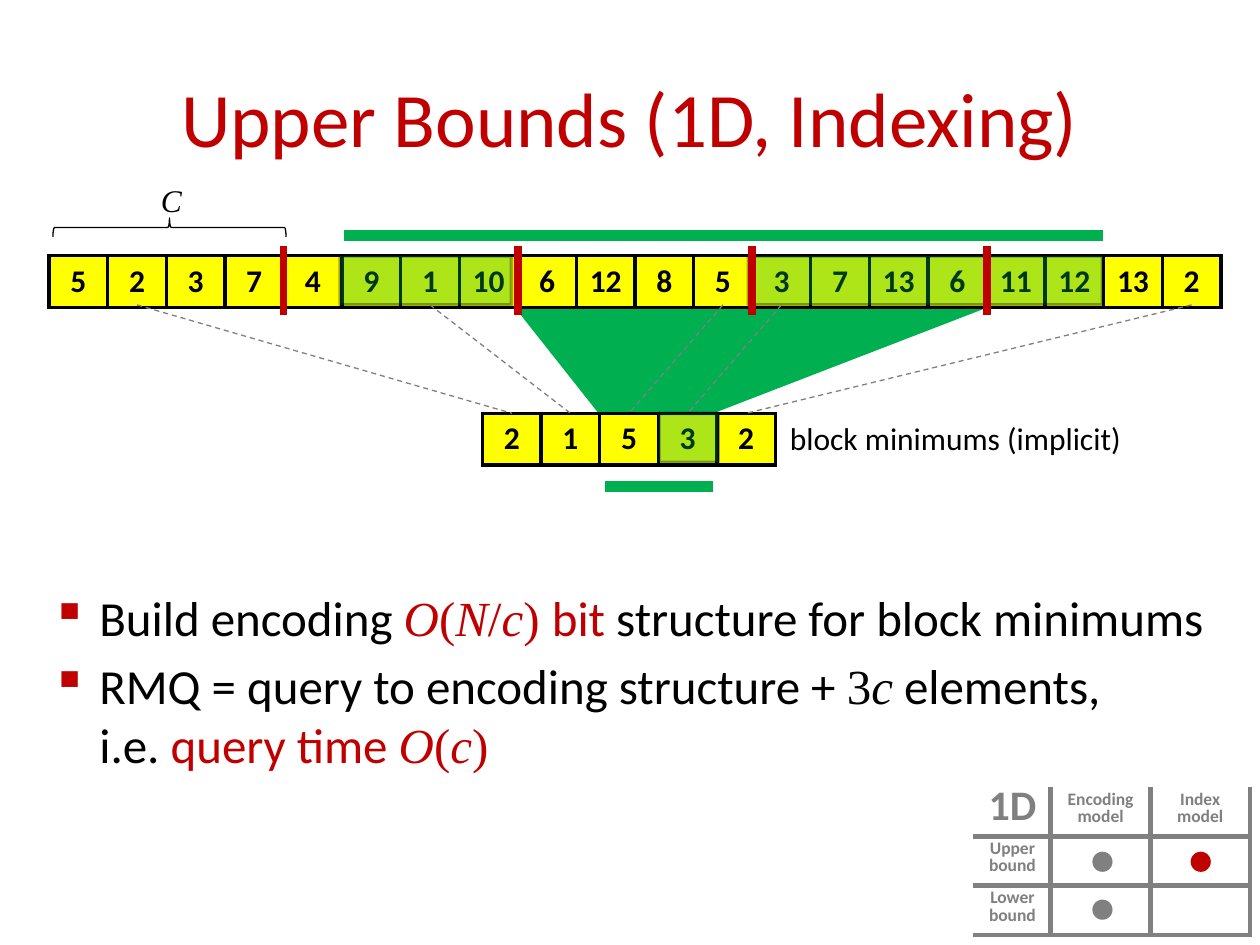
"""Build the slide on upper bounds for one-dimensional range minimum indexing."""
from lxml import etree
from pptx import Presentation
from pptx.dml.color import RGBColor
from pptx.enum.dml import MSO_LINE
from pptx.enum.shapes import MSO_CONNECTOR, MSO_SHAPE
from pptx.enum.text import MSO_ANCHOR, PP_ALIGN
from pptx.oxml.ns import qn
from pptx.util import Inches, Pt

BLACK = RGBColor(0x00, 0x00, 0x00)
RED = RGBColor(0xC0, 0x00, 0x00)
GREEN = RGBColor(0x00, 0xB0, 0x50)
YELLOW = RGBColor(0xFF, 0xFF, 0x00)
GREY = RGBColor(0x80, 0x80, 0x80)
SANS, SERIF = "Calibri", "Times New Roman"
CENTER, LEFT = PP_ALIGN.CENTER, PP_ALIGN.LEFT
MIDDLE, TOP, BOTTOM = MSO_ANCHOR.MIDDLE, MSO_ANCHOR.TOP, MSO_ANCHOR.BOTTOM
STRAIGHT, DASH = MSO_CONNECTOR.STRAIGHT, MSO_LINE.DASH
RECT, OVAL, BRACE = MSO_SHAPE.RECTANGLE, MSO_SHAPE.OVAL, MSO_SHAPE.LEFT_BRACE

CELL, ROW = 0.465, 0.41
ARRAY_X, ARRAY_Y = 0.39, 2.03
MIN_X, MIN_Y = 3.83, 3.28
JOIN_Y = 2.42
ARRAY = [5, 2, 3, 7, 4, 9, 1, 10, 6, 12, 8, 5, 3, 7, 13, 6, 11, 12, 13, 2]
MINIMUMS = [2, 1, 5, 3, 2]
MINIMUM_INDEXES = [1, 6, 11, 12, 19]
BLOCK = 4
MODELS = [["1D", "Encoding\nmodel", "Index\nmodel"],
          ["Upper\nbound", "", ""],
          ["Lower\nbound", "", ""]]
BULLETS = [
    [("Build encoding ", SANS, BLACK, False), ("O", SERIF, RED, True),
     ("(", SERIF, RED, False), ("N", SERIF, RED, True), ("/", SERIF, RED, False),
     ("c", SERIF, RED, True), (") ", SERIF, RED, False), ("bit ", SANS, RED, False),
     ("structure for block minimums", SANS, BLACK, False)],
    [("RMQ = query to encoding structure + ", SANS, BLACK, False),
     ("3", SERIF, BLACK, False), ("c", SERIF, BLACK, True),
     (" elements,", SANS, BLACK, False), None, ("i.e. ", SANS, BLACK, False),
     ("query time ", SANS, RED, False), ("O", SERIF, RED, True),
     ("(", SERIF, RED, False), ("c", SERIF, RED, True), (")", SERIF, RED, False)],
]


def style(font, size, name=SANS, color=BLACK, bold=False, italic=False):
    """Set the look of one font."""
    font.size, font.name, font.bold, font.italic = Pt(size), name, bold, italic
    font.color.rgb = color


def add_text(s, box, text, size, align=LEFT, anchor=TOP, **look):
    """Add a text box with one uniform paragraph."""
    tf = s.shapes.add_textbox(*map(Inches, box)).text_frame
    tf.word_wrap, tf.vertical_anchor = True, anchor
    tf.text = text
    p = tf.paragraphs[0]
    p.alignment = align
    style(p.runs[0].font, size, **look)


def add_bullets(s, box, items):
    """Add the bulleted list with mixed runs, where None is a line break."""
    tf = s.shapes.add_textbox(*map(Inches, box)).text_frame
    tf.word_wrap = True
    for i, item in enumerate(items):
        p = tf.add_paragraph() if i else tf.paragraphs[0]
        p.space_before = Pt(5.6)
        pPr = p._p.get_or_add_pPr()
        pPr.set("marL", str(Inches(0.38)))
        pPr.set("indent", str(-Inches(0.38)))
        color = etree.SubElement(pPr, qn("a:buClr"))
        etree.SubElement(color, qn("a:srgbClr"), val=str(RED))
        etree.SubElement(pPr, qn("a:buChar"), char="▪")
        for part in item:
            if part is None:
                p.add_line_break()
                continue
            r = p.add_run()
            r.text, name, tint, italic = part
            style(r.font, 28, name, tint, italic=italic)


def add_line(s, start, end, color, width, dash=None):
    """Add a straight line without a shadow."""
    line = s.shapes.add_connector(STRAIGHT, *map(Inches, start + end))
    line.line.color.rgb, line.line.width = color, Pt(width)
    if dash:
        line.line.dash_style = dash
    etree.SubElement(line._element.spPr, qn("a:effectLst"))


def add_dot(s, x, y, color):
    """Add a filled dot."""
    dot = s.shapes.add_shape(OVAL, *map(Inches, (x, y, 0.16, 0.16)))
    dot.shadow.inherit = False
    dot.fill.solid()
    dot.fill.fore_color.rgb = color
    dot.line.fill.background()


def add_highlight(s, x, y, width):
    """Add a see-through green rectangle over table cells."""
    rect = s.shapes.add_shape(RECT, *map(Inches, (x, y, width, 0.39)))
    rect.shadow.inherit = False
    rect.fill.solid()
    rect.fill.fore_color.rgb = GREEN
    rect.line.color.rgb, rect.line.width = BLACK, Pt(2)
    for color in rect._element.spPr.iter(qn("a:srgbClr")):
        etree.SubElement(color, qn("a:alpha"), val="32000")


def add_brace(s):
    """Add the brace that spans the first block."""
    brace = s.shapes.add_shape(BRACE, *map(Inches, (1.27, 0.88, 0.15, 1.85)))
    brace.shadow.inherit = False
    brace.rotation = 90
    brace.fill.background()
    brace.line.color.rgb, brace.line.width = BLACK, Pt(0.75)


def add_funnel(s):
    """Add the green area that joins whole blocks to their minimums."""
    points = [(4.07, 2.42), (4.75, 3.28), (5.69, 3.27), (7.84, 2.44)]
    corners = [(Inches(x), Inches(y)) for x, y in points]
    builder = s.shapes.build_freeform(*corners[0])
    builder.add_line_segments(corners[1:])
    funnel = builder.convert_to_shape()
    funnel.shadow.inherit = False
    funnel.fill.solid()
    funnel.fill.fore_color.rgb = GREEN
    funnel.line.fill.background()


def set_borders(cell, sides, color, width):
    """Draw the given sides of a cell, in the order L, R, T, B."""
    tcPr = cell._tc.get_or_add_tcPr()
    for i, side in enumerate(sides):
        ln = etree.Element(qn("a:ln" + side), w=str(Pt(width)))
        fill = etree.SubElement(ln, qn("a:solidFill"))
        etree.SubElement(fill, qn("a:srgbClr"), val=str(color))
        tcPr.insert(i, ln)


def add_grid(s, x, y, widths, heights):
    """Add a plain table and return it."""
    box = map(Inches, (x, y, sum(widths), sum(heights)))
    table = s.shapes.add_table(len(heights), len(widths), *box).table
    table.first_row = table.horz_banding = False
    for column, width in zip(table.columns, widths):
        column.width = Inches(width)
    for row, height in zip(table.rows, heights):
        row.height = Inches(height)
    return table


def add_array(s, x, y, values):
    """Add a row of yellow number cells."""
    table = add_grid(s, x, y, [CELL] * len(values), [ROW])
    for cell, value in zip(table.iter_cells(), values):
        cell.margin_left = cell.margin_right = Inches(0.02)
        cell.vertical_anchor = MIDDLE
        cell.text = str(value)
        p = cell.text_frame.paragraphs[0]
        p.alignment = CENTER
        style(p.runs[0].font, 18, bold=True)
        cell.fill.solid()
        cell.fill.fore_color.rgb = YELLOW
        set_borders(cell, "LRTB", BLACK, 2.25)


def add_models(s):
    """Add the small overview table of models and bounds."""
    table = add_grid(s, 7.73, 6.25, [0.61, 0.79, 0.79], [0.39] * 3)
    for i, row in enumerate(MODELS):
        for j, text in enumerate(row):
            cell = table.cell(i, j)
            cell.margin_left = cell.margin_right = Inches(0.05)
            cell.margin_top = cell.margin_bottom = Inches(0.04)
            corner = i == j == 0
            cell.vertical_anchor = BOTTOM if corner else TOP
            cell.text = text
            for p in cell.text_frame.paragraphs:
                p.alignment, p.line_spacing = CENTER, Pt(10)
                for r in p.runs:
                    style(r.font, 24 if corner else 10, color=GREY, bold=True)
            cell.fill.background()
            sides = ("L" if j else "") + "R" + ("T" if i else "") + "B"
            set_borders(cell, sides, GREY, 3)


def main():
    """Build and save the slide."""
    prs = Presentation()
    prs.slide_width, prs.slide_height = Inches(10), Inches(7.5)
    s = prs.slides.add_slide(prs.slide_layouts[6])
    add_funnel(s)
    add_array(s, MIN_X, MIN_Y, MINIMUMS)
    add_array(s, ARRAY_X, ARRAY_Y, ARRAY)
    add_line(s, (2.73, 1.87), (8.75, 1.87), GREEN, 6)
    add_line(s, (4.8, 3.86), (5.66, 3.86), GREEN, 6)
    for x, y, width in [(2.7, ARRAY_Y, 1.36), (5.94, ARRAY_Y, 2.81), (5.23, MIN_Y, 0.47)]:
        add_highlight(s, x, y, width)
    add_models(s)
    add_text(s, (0.5, 0.3, 9, 1.25), "Upper Bounds (1D, Indexing)", 44, CENTER, MIDDLE, color=RED)
    for x, y, color in [(8.67, 6.76, GREY), (8.67, 7.14, GREY), (9.45, 6.76, RED)]:
        add_dot(s, x, y, color)
    add_brace(s)
    add_text(s, (0.97, 1.39, 0.78, 0.4), "C", 18, CENTER, name=SERIF, italic=True)
    for i, index in enumerate(MINIMUM_INDEXES):
        start = (ARRAY_X + CELL * (index + 0.5), JOIN_Y)
        add_line(s, start, (MIN_X + CELL * (i + 0.5), MIN_Y), GREY, 0.75, DASH)
    for index in range(BLOCK, len(ARRAY), BLOCK):
        x = ARRAY_X + CELL * index
        add_line(s, (x, 1.95), (x, 2.5), RED, 4.5)
    add_bullets(s, (0.31, 4.61, 9.38, 1.72), BULLETS)
    add_text(s, (6.17, 3.28, 3.05, 0.4), "block minimums (implicit)", 18)
    prs.save("out.pptx")


if __name__ == "__main__":
    main()
